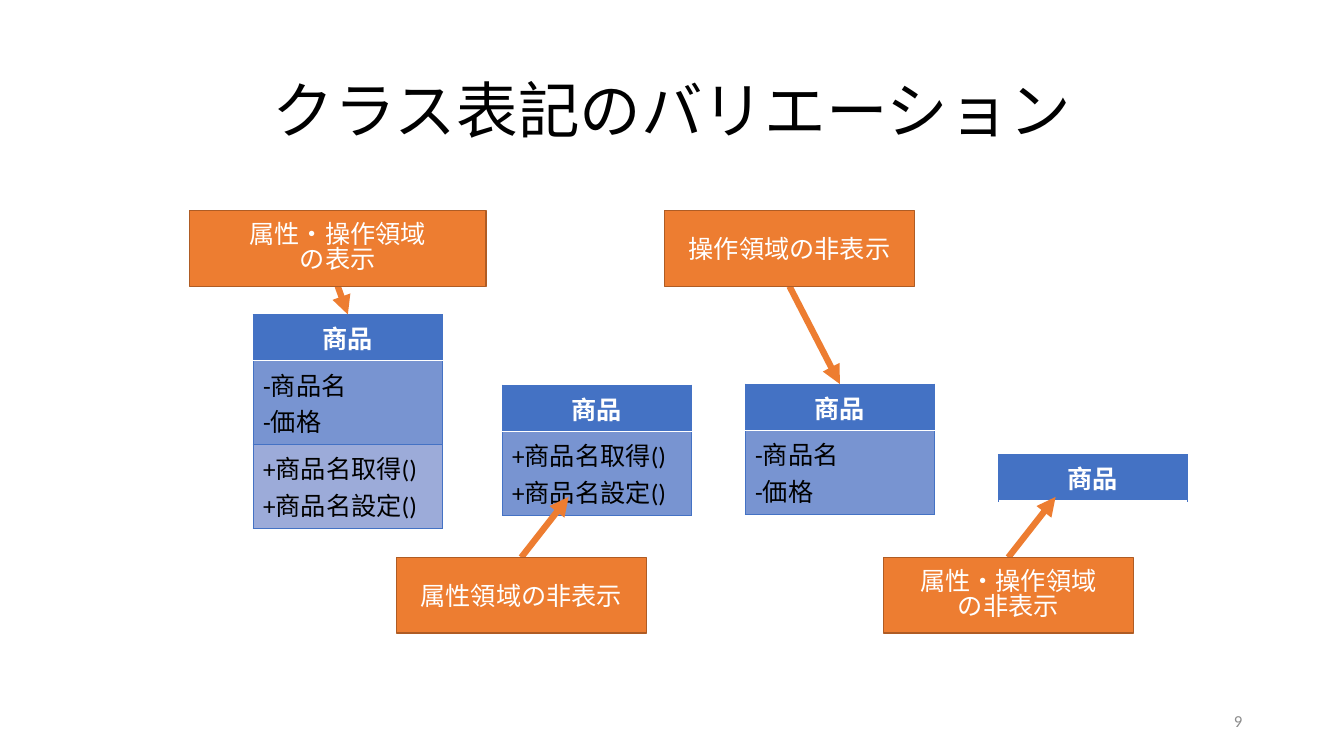
from dataclasses import dataclass

from lxml.etree import SubElement
from pptx import Presentation
from pptx.dml.color import RGBColor
from pptx.enum.shapes import MSO_CONNECTOR as Connector
from pptx.enum.shapes import MSO_SHAPE as Shape
from pptx.enum.text import MSO_ANCHOR as Anchor
from pptx.enum.text import PP_ALIGN as Align
from pptx.oxml.ns import qn
from pptx.slide import Slide
from pptx.table import _Cell as Cell
from pptx.text.text import TextFrame
from pptx.util import Inches, Pt

COLORS = {
    "black": "000000",
    "white": "FFFFFF",
    "gray": "8C8C8C",
    "blue": "4472C4",
    "attributes": "7894D1",
    "operations": "9CABD9",
    "orange": "ED7D31",
    "brown": "AF5C24",
}
FONT = "Calibri"
CLASS_WIDTH = 1.88
HEADER_HEIGHT = 0.46
BODY_HEIGHT = 0.83
LABEL_HEIGHT = 0.75
ATTRIBUTES = "-商品名\n-価格"
OPERATIONS = "+商品名取得()\n+商品名設定()"


@dataclass
class ClassBox:
    left: float
    top: float
    sections: tuple[str, ...] = ()


@dataclass
class Label:
    text: str
    left: float
    top: float
    width: float
    target: tuple[float, float]


CLASSES = [
    ClassBox(2.51, 3.12, (ATTRIBUTES, OPERATIONS)),
    ClassBox(4.98, 3.82, (OPERATIONS,)),
    ClassBox(7.39, 3.81, (ATTRIBUTES,)),
    ClassBox(9.9, 4.51),
]
LABELS = [
    Label("属性・操作領域\nの表示", 1.88, 2.09, 2.94, (3.45, 3.12)),
    Label("属性領域の非表示", 3.93, 5.53, 2.48, (5.64, 4.93)),
    Label("操作領域の非表示", 6.59, 2.09, 2.48, (8.33, 3.81)),
    Label("属性・操作領域\nの非表示", 8.76, 5.53, 2.48, (10.47, 4.93)),
]


def rgb(name: str) -> RGBColor:
    return RGBColor.from_string(COLORS[name])


def write(frame: TextFrame, text: str, size: float, color: str, align: Align,
          bold: bool = False, spacing: float = 1.0) -> None:
    frame.text = text
    for para in frame.paragraphs:
        para.alignment = align
        para.line_spacing = spacing
        for span in para.runs:
            span.font.name = FONT
            span.font.size = Pt(size)
            span.font.bold = bold
            span.font.color.rgb = rgb(color)


def add_text(page: Slide, text: str, left: float, top: float, width: float, height: float,
             size: float, color: str, align: Align, spacing: float = 1.0) -> None:
    box = page.shapes.add_textbox(Inches(left), Inches(top), Inches(width), Inches(height))
    box.text_frame.word_wrap = True
    box.text_frame.vertical_anchor = Anchor.MIDDLE
    write(box.text_frame, text, size, color, align, spacing=spacing)


def add_border(cell: Cell, side: str, color: str, points: float) -> None:
    properties = cell._tc.get_or_add_tcPr()
    line = SubElement(properties, qn(f"a:ln{side}"), w=str(Pt(points)))
    fill = SubElement(line, qn("a:solidFill"))
    SubElement(fill, qn("a:srgbClr"), val=COLORS[color])


def style_cell(cell: Cell, fill: str, header: bool, under_header: bool) -> None:
    for side in "LRTB":
        if header and side == "B" or under_header and side == "T":
            add_border(cell, side, "white", 1)
        else:
            add_border(cell, side, "blue", 0.5)
    cell.fill.solid()
    cell.fill.fore_color.rgb = rgb(fill)


def add_class(page: Slide, item: ClassBox) -> None:
    texts = ("商品", *item.sections)
    heights = [HEADER_HEIGHT] + [BODY_HEIGHT] * len(item.sections)
    table = page.shapes.add_table(
        len(texts), 1, Inches(item.left), Inches(item.top),
        Inches(CLASS_WIDTH), Inches(sum(heights))).table
    fills = ("blue", "attributes", "operations")
    for index, (text, height, fill) in enumerate(zip(texts, heights, fills)):
        table.rows[index].height = Inches(height)
        cell = table.cell(index, 0)
        header = index == 0
        style_cell(cell, fill, header, index == 1)
        write(cell.text_frame, text, 18, "white" if header else "black",
              Align.CENTER if header else Align.LEFT, bold=header)


def add_arrow(page: Slide, start: tuple[float, float], end: tuple[float, float]) -> None:
    arrow = page.shapes.add_connector(
        Connector.STRAIGHT, *(Inches(value) for value in (*start, *end)))
    arrow.line.color.rgb = rgb("orange")
    arrow.line.width = Pt(4.5)
    SubElement(arrow.line._get_or_add_ln(), qn("a:tailEnd"), type="triangle")
    SubElement(arrow._element.spPr, qn("a:effectLst"))


def add_label(page: Slide, label: Label) -> None:
    above = label.top < label.target[1]
    edge = label.top + LABEL_HEIGHT if above else label.top
    add_arrow(page, (label.left + label.width / 2, edge), label.target)
    box = page.shapes.add_shape(
        Shape.RECTANGLE, Inches(label.left), Inches(label.top),
        Inches(label.width), Inches(LABEL_HEIGHT))
    box.shadow.inherit = False
    box.fill.solid()
    box.fill.fore_color.rgb = rgb("orange")
    box.line.color.rgb = rgb("brown")
    box.line.width = Pt(1)
    box.text_frame.vertical_anchor = Anchor.MIDDLE
    spacing = 0.82 if "\n" in label.text else 1.0
    write(box.text_frame, label.text, 18, "white", Align.CENTER, spacing=spacing)


def main() -> None:
    deck = Presentation()
    deck.slide_width = Inches(13.33)
    deck.slide_height = Inches(7.5)
    page = deck.slides.add_slide(deck.slide_layouts[6])
    add_text(page, "クラス表記のバリエーション", 0.92, 0.4, 11.5, 1.45,
             44, "black", Align.CENTER, 0.9)
    add_text(page, "9", 9.42, 6.95, 3, 0.4, 12, "gray", Align.RIGHT)
    for item in CLASSES:
        add_class(page, item)
    for label in LABELS:
        add_label(page, label)
    deck.save("out.pptx")


if __name__ == "__main__":
    main()
